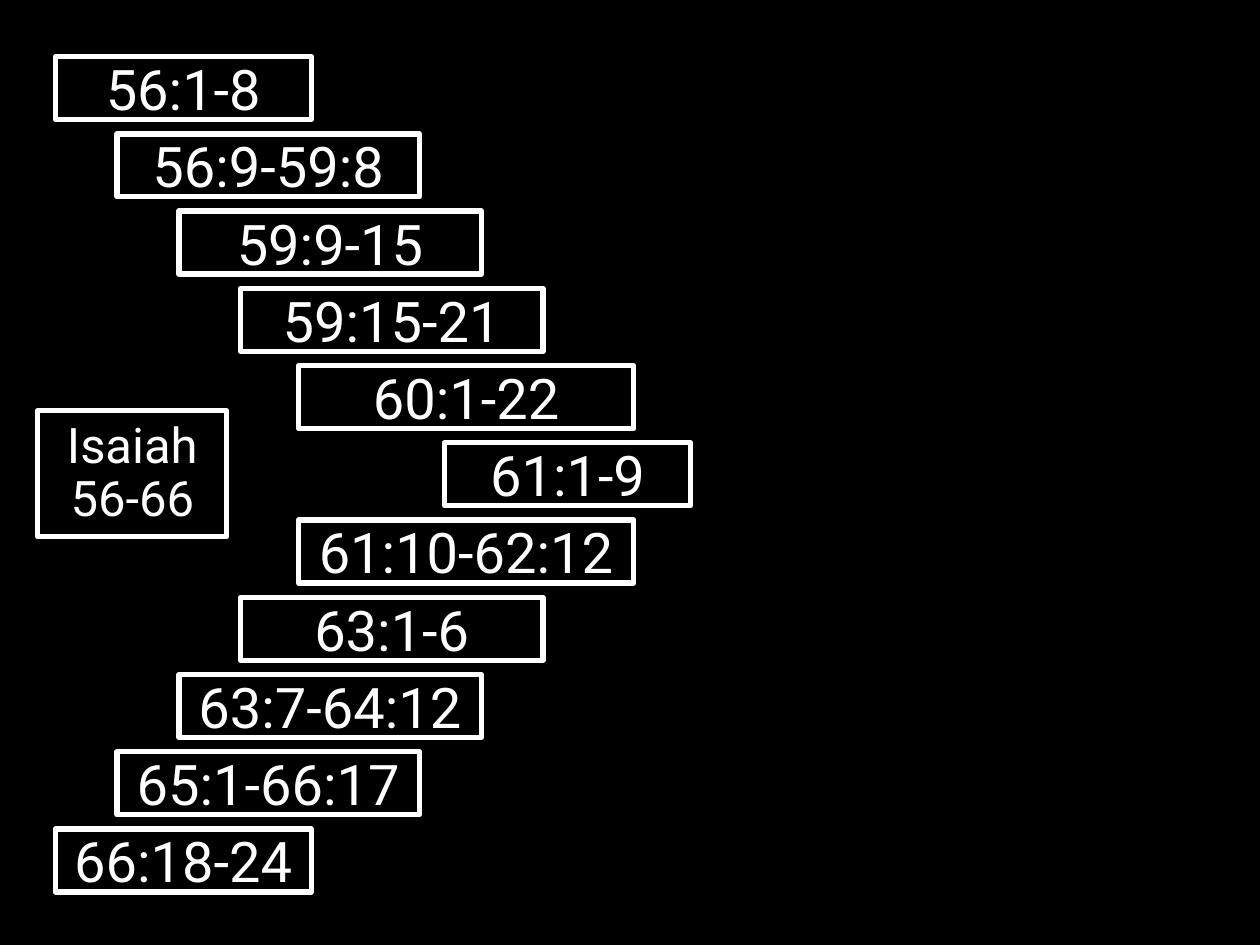
from pptx import Presentation
from pptx.dml.color import RGBColor
from pptx.enum.shapes import MSO_SHAPE as Shape
from pptx.enum.text import MSO_ANCHOR as Anchor, PP_ALIGN as Align
from pptx.util import Inches, Pt

BLACK = RGBColor(0, 0, 0)
WHITE = RGBColor(255, 255, 255)

# Content: passages mirror each other around the centre
HEADING = "Isaiah 56-66"
PASSAGES = ["56:1-8", "56:9-59:8", "59:9-15", "59:15-21", "60:1-22", "61:1-9",
            "61:10-62:12", "63:1-6", "63:7-64:12", "65:1-66:17", "66:18-24"]

# Left edge and width of each level, from the outside to the centre (inches)
LEVELS = [(0.44, 2.03), (0.93, 2.4), (1.42, 2.4),
          (1.91, 2.4), (2.37, 2.66), (3.53, 1.95)]
FIRST_TOP, LAST_TOP, ROW_HEIGHT = 0.45, 6.58, 0.5
HEADING_BOX = (0.3, 3.26, 1.5, 1)


def style_box(box, text, size, wrap, line_spacing):
    """Outline a box in white and centre its text."""
    box.fill.background()
    box.line.color.rgb = WHITE
    box.line.width = Pt(3)
    frame = box.text_frame
    frame.text = text
    frame.word_wrap = wrap
    frame.vertical_anchor = Anchor.MIDDLE
    paragraph = frame.paragraphs[0]
    paragraph.alignment = Align.CENTER
    paragraph.line_spacing = line_spacing
    font = paragraph.runs[0].font
    for name, value in {"name": "Roboto", "size": Pt(size), "bold": False}.items():
        setattr(font, name, value)
    font.color.rgb = WHITE


prs = Presentation()
prs.slide_width, prs.slide_height = Inches(10), Inches(7.5)
slide = prs.slides.add_slide(prs.slide_layouts[5])
slide.background.fill.solid()
slide.background.fill.fore_color.rgb = BLACK

# Heading
heading = slide.shapes.title
heading.left, heading.top, heading.width, heading.height = map(Inches, HEADING_BOX)
style_box(heading, HEADING, size=28, wrap=True, line_spacing=0.9)

# Passages, stepping in to the centre and back out
last = len(PASSAGES) - 1
pitch = (LAST_TOP - FIRST_TOP) / last
for row, passage in enumerate(PASSAGES):
    left, width = LEVELS[min(row, last - row)]
    place = (left, FIRST_TOP + row * pitch, width, ROW_HEIGHT)
    box = slide.shapes.add_shape(Shape.RECTANGLE, *map(Inches, place))
    box.shadow.inherit = False
    style_box(box, passage, size=32, wrap=False, line_spacing=1.0)

prs.save("out.pptx")
